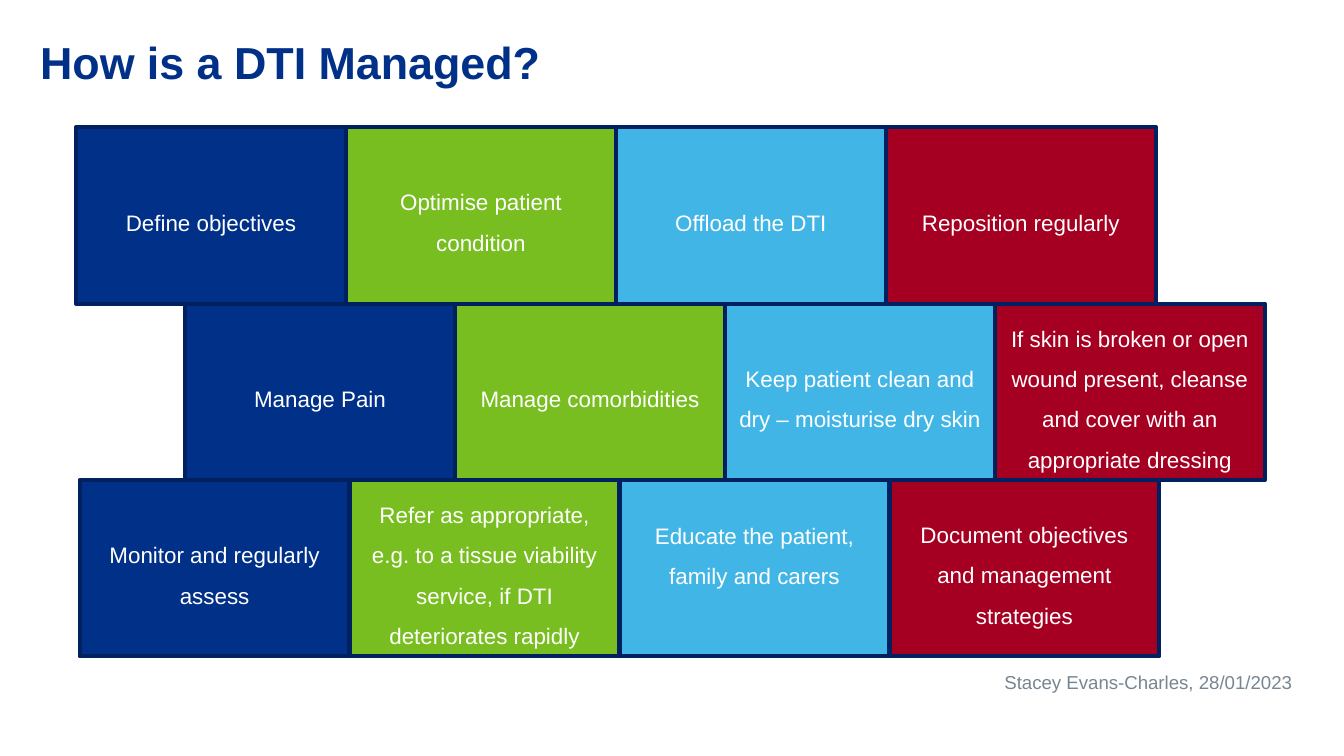
from pptx import Presentation
from pptx.dml.color import RGBColor
from pptx.enum.shapes import MSO_SHAPE
from pptx.enum.text import MSO_ANCHOR, PP_ALIGN
from pptx.util import Pt

NAVY, OUTLINE, GREY, WHITE = "003087", "002060", "768692", "FFFFFF"
COLUMN_FILLS = [NAVY, "78BE20", "41B6E6", "A50021"]
BRICK_W, BRICK_H = 144.6, 94.5
WALL_TOP = 68.2
BRICK_FRAME = {
    "word_wrap": True,
    "vertical_anchor": MSO_ANCHOR.MIDDLE,
    "margin_left": Pt(6),
    "margin_right": Pt(6),
    "margin_top": Pt(3),
    "margin_bottom": Pt(3),
}
RAISED_FRAME = {**BRICK_FRAME, "margin_bottom": Pt(23.7)}
COURSES = [
    (40.8, ["Define objectives", "Optimise patient condition",
            "Offload the DTI", "Reposition regularly"]),
    (99.2, ["Manage Pain", "Manage comorbidities",
            "Keep patient clean and dry – moisturise dry skin",
            "If skin is broken or open wound present, cleanse and cover "
            "with an appropriate dressing"]),
    (42.7, ["Monitor and regularly assess",
            "Refer as appropriate, e.g. to a tissue viability service, "
            "if DTI deteriorates rapidly",
            "Educate the patient, family and carers",
            "Document objectives and management strategies"]),
]
RAISED_TEXTS = {"Educate the patient, family and carers"}


def rgb(value):
    return RGBColor.from_string(value)


def set_attrs(obj, values):
    for name, value in values.items():
        setattr(obj, name, value)


def write(tf, text, size, color, bold=False, **paragraph):
    p = tf.paragraphs[0]
    set_attrs(p, paragraph)
    r = p.add_run()
    r.text = text
    set_attrs(r.font, {"name": "Arial", "size": Pt(size), "bold": bold})
    r.font.color.rgb = rgb(color)


def add_label(s, box, text, size, color, **style):
    tf = s.shapes.add_textbox(*map(Pt, box)).text_frame
    tf.word_wrap = True
    write(tf, text, size, color, **style)


def add_brick(s, left, top, fill, text):
    sp = s.shapes.add_shape(
        MSO_SHAPE.RECTANGLE, Pt(left), Pt(top), Pt(BRICK_W), Pt(BRICK_H))
    sp.shadow.inherit = False
    sp.fill.solid()
    sp.fill.fore_color.rgb = rgb(fill)
    sp.line.color.rgb = rgb(OUTLINE)
    sp.line.width = Pt(2.25)
    tf = sp.text_frame
    set_attrs(tf, RAISED_FRAME if text in RAISED_TEXTS else BRICK_FRAME)
    write(tf, text, 12, WHITE, alignment=PP_ALIGN.CENTER, line_spacing=1.5)


def add_wall(s):
    for row, (left, texts) in enumerate(COURSES):
        for col, (fill, text) in enumerate(zip(COLUMN_FILLS, texts)):
            add_brick(s, left + col * BRICK_W, WALL_TOP + row * BRICK_H,
                      fill, text)


def main():
    prs = Presentation()
    set_attrs(prs, {"slide_width": Pt(720), "slide_height": Pt(405)})
    s = prs.slides.add_slide(prs.slide_layouts[6])
    add_label(s, (14.4, 15.1, 568.8, 36), "How is a DTI Managed?",
              24, NAVY, bold=True)
    add_label(s, (530.6, 355.7, 168.5, 19.4),
              "Stacey Evans-Charles, 28/01/2023", 10, GREY,
              alignment=PP_ALIGN.RIGHT)
    add_wall(s)
    prs.save("out.pptx")


if __name__ == "__main__":
    main()
